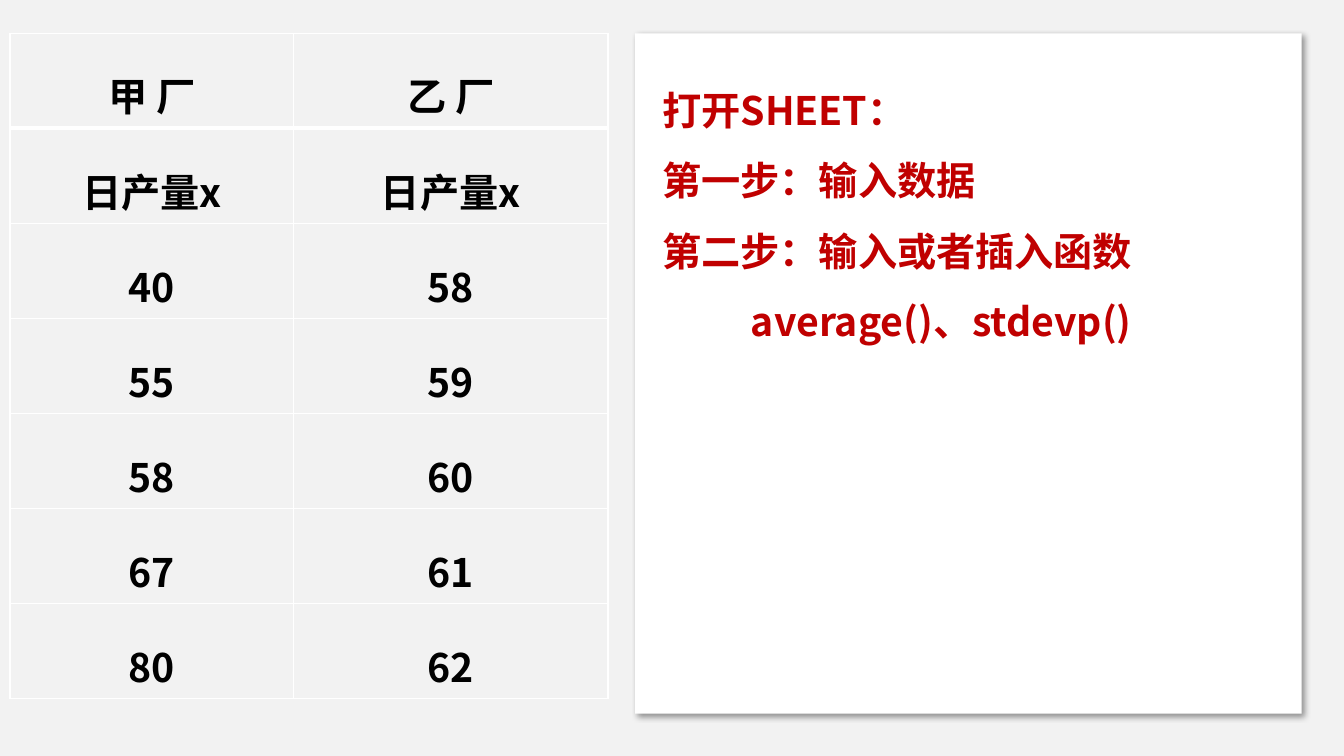
from pptx import Presentation
from pptx.dml.color import RGBColor
from pptx.enum.shapes import MSO_SHAPE
from pptx.enum.text import MSO_ANCHOR, PP_ALIGN
from pptx.oxml import parse_xml
from pptx.oxml.ns import nsdecls, qn
from pptx.util import Inches, Pt

RECTANGLE = MSO_SHAPE.RECTANGLE
MIDDLE = MSO_ANCHOR.MIDDLE
CENTER, LEFT = PP_ALIGN.CENTER, PP_ALIGN.LEFT

COLORS = {"background": "F2F2F2", "panel": "FFFFFF", "border": "FFFFFF",
          "data": "000000", "steps": "C00000", "shadow": "000000"}
FONT = "Noto Sans CJK JP"
FONT_FORMAT = {"name": FONT, "size": Pt(28), "bold": True}

OUTPUT_ROWS = [
    ("甲 厂", "乙 厂"),
    ("日产量x", "日产量x"),
    ("40", "58"),
    ("55", "59"),
    ("58", "60"),
    ("67", "61"),
    ("80", "62"),
]
# Each step is its text and its left indent in inches
STEPS = [
    ("打开SHEET：", 0),
    ("第一步：输入数据", 0),
    ("第二步：输入或者插入函数", 0),
    ("average()、stdevp()", 0.88),
]


def rgb(name):
    return RGBColor.from_string(COLORS[name])


class SlideBuilder:
    def __init__(self, slide):
        self.slide = slide
        fill = slide.background.fill
        fill.solid()
        fill.fore_color.rgb = rgb("background")

    def add_text(self, paragraph, text, color, alignment, indent=0):
        paragraph_format = {"alignment": alignment, "line_spacing": 1.5}
        for attribute, value in paragraph_format.items():
            setattr(paragraph, attribute, value)
        if indent:
            properties = paragraph._p.get_or_add_pPr()
            properties.set("marL", str(Inches(indent)))
            properties.set("indent", "0")
        run = paragraph.add_run()
        run.text = text
        for attribute, value in FONT_FORMAT.items():
            setattr(run.font, attribute, value)
        run.font.color.rgb = rgb(color)
        run_properties = run._r.get_or_add_rPr()
        east_asian = run_properties.makeelement(qn("a:ea"), {"typeface": FONT})
        run_properties.find(qn("a:latin")).addnext(east_asian)

    def border(self, cell, widths):
        properties = cell._tc.get_or_add_tcPr()
        for side, width in widths.items():
            properties.append(parse_xml(
                f'<a:ln{side} {nsdecls("a")} w="{Pt(width)}"><a:solidFill>'
                f'<a:srgbClr val="{COLORS["border"]}"/></a:solidFill></a:ln{side}>'))

    def table(self, left, top, column_widths, row_height, rows):
        frame = self.slide.shapes.add_table(
            len(rows), len(column_widths), Inches(left), Inches(top),
            Inches(sum(column_widths)), Inches(row_height * len(rows)))
        table = frame.table
        table.first_row = table.horz_banding = False
        for column, width in zip(table.columns, column_widths):
            column.width = Inches(width)
        for row_index, texts in enumerate(rows):
            for column_index, text in enumerate(texts):
                cell = table.cell(row_index, column_index)
                cell.vertical_anchor = MIDDLE
                # The line under the heading row is thicker
                self.border(cell, {"L": 1, "R": 1,
                                   "T": 3 if row_index == 1 else 1,
                                   "B": 3 if row_index == 0 else 1})
                cell.fill.background()
                self.add_text(cell.text_frame.paragraphs[0], text, "data", CENTER)

    def panel(self, shapes, left, top, width, height):
        panel = shapes.add_shape(RECTANGLE, Inches(left), Inches(top),
                                 Inches(width), Inches(height))
        panel.fill.solid()
        panel.fill.fore_color.rgb = rgb("panel")
        panel.line.fill.background()
        panel._element.spPr.append(parse_xml(
            f'<a:effectLst {nsdecls("a")}><a:outerShdw blurRad="{Pt(4)}" '
            f'dist="{Pt(3)}" dir="{45 * 60000}" algn="tl" rotWithShape="0">'
            f'<a:srgbClr val="{COLORS["shadow"]}"><a:alpha val="40000"/>'
            '</a:srgbClr></a:outerShdw></a:effectLst>'))

    def steps(self, shapes, left, top, width, height, steps):
        box = shapes.add_textbox(Inches(left), Inches(top), Inches(width), Inches(height))
        frame = box.text_frame
        frame.word_wrap = True
        for index, (text, indent) in enumerate(steps):
            paragraph = frame.add_paragraph() if index else frame.paragraphs[0]
            self.add_text(paragraph, text, "steps", LEFT, indent)


def main():
    presentation = Presentation()
    presentation.slide_width = Inches(13.33)
    presentation.slide_height = Inches(7.5)
    builder = SlideBuilder(presentation.slides.add_slide(presentation.slide_layouts[6]))

    # Daily output of the two factories
    builder.table(0.1, 0.33, (2.81, 3.12), 0.8, OUTPUT_ROWS)

    # Panel with the calculation steps
    group = builder.slide.shapes.add_group_shape()
    builder.panel(group.shapes, 6.3, 0.33, 6.61, 6.75)
    builder.steps(group.shapes, 6.47, 0.57, 6.28, 3.63, STEPS)

    presentation.save("out.pptx")


if __name__ == "__main__":
    main()
